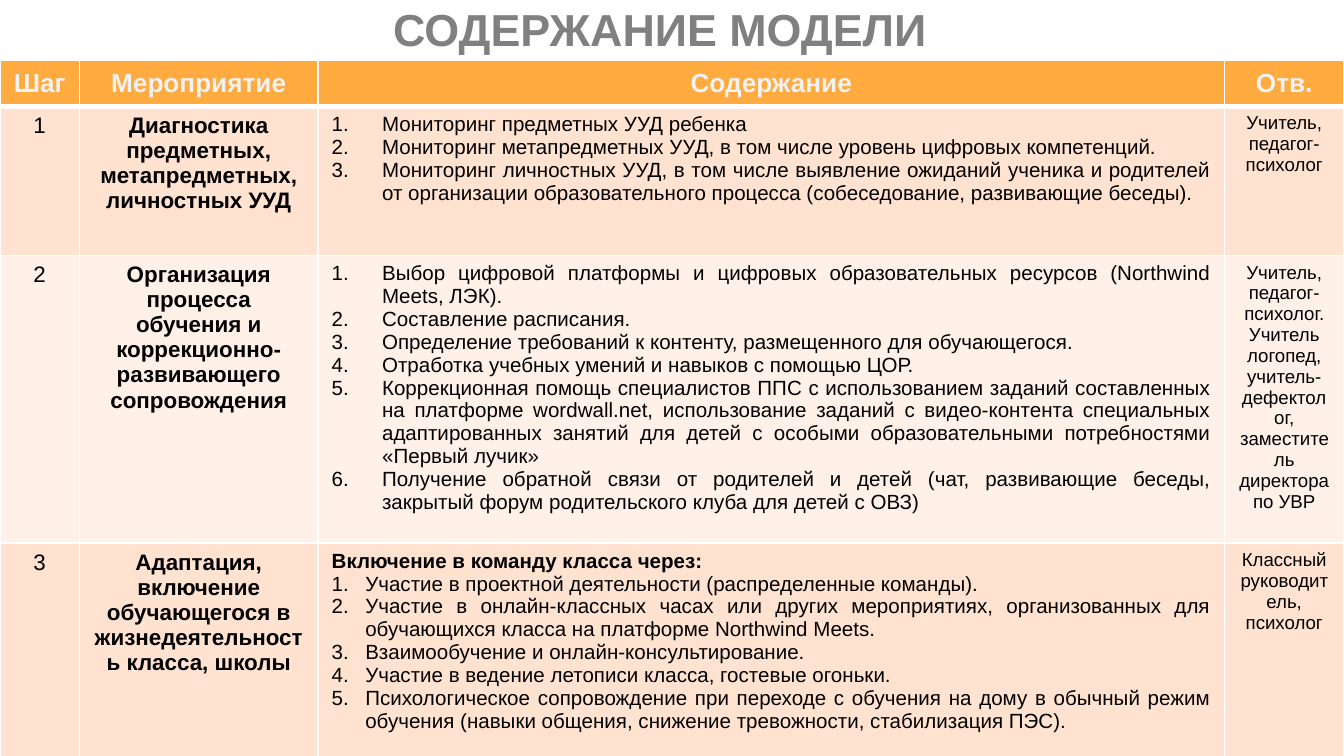
from lxml import etree
from pptx import Presentation
from pptx.dml.color import RGBColor
from pptx.enum.text import MSO_ANCHOR, MSO_AUTO_SIZE, PP_ALIGN
from pptx.oxml.ns import qn
from pptx.util import Pt

CENTER, JUSTIFY = PP_ALIGN.CENTER, PP_ALIGN.JUSTIFY
TOP, MIDDLE = MSO_ANCHOR.TOP, MSO_ANCHOR.MIDDLE

TITLE = "СОДЕРЖАНИЕ МОДЕЛИ"
HEADER = ["Шаг", "Мероприятие", "Содержание", "Отв."]
STEPS = [
    {
        "event": "Диагностика предметных, метапредметных, личностных УУД",
        "lead": None,
        "indent": 27,
        "items": [
            "Мониторинг предметных УУД ребенка",
            "Мониторинг метапредметных УУД, в том числе уровень цифровых компетенций.",
            "Мониторинг личностных УУД, в том числе выявление ожиданий ученика и родителей "
            "от организации образовательного процесса (собеседование, развивающие беседы).",
        ],
        "staff": "Учитель, педагог-психолог",
    },
    {
        "event": "Организация процесса обучения и коррекционно-развивающего сопровождения",
        "lead": None,
        "indent": 27,
        "items": [
            "Выбор цифровой платформы и цифровых образовательных ресурсов (Northwind Meets, ЛЭК).",
            "Составление расписания.",
            "Определение требований к контенту, размещенного для обучающегося.",
            "Отработка учебных умений и навыков с помощью ЦОР.",
            "Коррекционная помощь специалистов ППС с использованием заданий составленных на "
            "платформе wordwall.net, использование заданий с видео-контента специальных "
            "адаптированных занятий для детей с особыми образовательными потребностями "
            "«Первый лучик»",
            "Получение обратной связи от родителей и детей (чат, развивающие беседы, "
            "закрытый форум родительского клуба для детей с ОВЗ)",
        ],
        "staff": "Учитель, педагог-психолог. Учитель логопед, учитель-дефектолог, "
                 "заместитель директора по УВР",
    },
    {
        "event": "Адаптация, включение обучающегося в жизнедеятельность класса, школы",
        "lead": "Включение в команду класса через:",
        "indent": 18,
        "items": [
            "Участие в проектной деятельности (распределенные команды).",
            "Участие в онлайн-классных часах или других мероприятиях, организованных для "
            "обучающихся класса на платформе Northwind Meets.",
            "Взаимообучение и онлайн-консультирование.",
            "Участие в ведение летописи класса, гостевые огоньки.",
            "Психологическое сопровождение при переходе с обучения на дому в обычный режим "
            "обучения (навыки общения, снижение тревожности, стабилизация ПЭС).",
        ],
        "staff": "Классный руководитель, психолог",
    },
]

THEME = {
    "font": "Arial",
    "header_fill": "FFAB40",
    "bands": ["FFE2CF", "FFF1E8"],
    "border": "FFFFFF",
    "text": "000000",
    "title": {"size": 24, "bold": True, "color": "808080"},
    "header": {"size": 14, "bold": True, "color": "F2F2F2"},
    "step": {"size": 12, "bold": False, "color": "000000"},
    "event": {"size": 12, "bold": True, "color": "000000"},
    "lead": {"size": 11, "bold": True, "color": "000000"},
    "item": {"size": 11, "bold": False, "color": "000000"},
    "staff": {"size": 10, "bold": False, "color": "000000"},
}
SLIDE_W, SLIDE_H = 720, 405
TITLE_BOX = {"left": 101, "top": -6.5, "width": 505, "height": 33}
TABLE_TOP = 32.4
COL_WIDTHS = [42.5, 128, 485.5, 64]
ROW_HEIGHTS = [24.5, 80, 154, 114.5]


def write(p, text, style, align=CENTER):
    p.alignment = align
    r = p.add_run()
    r.text = text
    look = THEME[style]
    values = {"name": THEME["font"], "size": Pt(look["size"]), "bold": look["bold"]}
    for name, value in values.items():
        setattr(r.font, name, value)
    r.font.color.rgb = RGBColor.from_string(look["color"])


def number(p, indent):
    pPr = p._p.get_or_add_pPr()
    pPr.set("marL", str(Pt(indent)))
    pPr.set("indent", str(-Pt(indent)))
    color = etree.SubElement(pPr, qn("a:buClr"))
    etree.SubElement(color, qn("a:srgbClr"), val=THEME["text"])
    etree.SubElement(pPr, qn("a:buAutoNum"), type="arabicPeriod")


def format_cell(cell, fill, anchor, bottom):
    tcPr = cell._tc.get_or_add_tcPr()
    for side, width in (("L", 1), ("R", 1), ("T", 1), ("B", bottom)):
        ln = etree.SubElement(tcPr, qn("a:ln" + side), w=str(Pt(width)))
        solid = etree.SubElement(ln, qn("a:solidFill"))
        etree.SubElement(solid, qn("a:srgbClr"), val=THEME["border"])
    cell.fill.solid()
    cell.fill.fore_color.rgb = RGBColor.from_string(fill)
    cell.vertical_anchor = anchor


def fill_content(tf, step):
    entries = [(step["lead"], "lead")] if step["lead"] else []
    entries += [(text, "item") for text in step["items"]]
    for i, (text, style) in enumerate(entries):
        p = tf.add_paragraph() if i else tf.paragraphs[0]
        if style == "item":
            number(p, step["indent"])
        write(p, text, style, JUSTIFY)


def add_title(s):
    sp = s.shapes.title
    for name, value in TITLE_BOX.items():
        setattr(sp, name, Pt(value))
    tf = sp.text_frame
    frame = {"word_wrap": True, "auto_size": MSO_AUTO_SIZE.NONE, "vertical_anchor": TOP}
    frame.update({"margin_" + side: Pt(7.2) for side in ("left", "right", "top", "bottom")})
    for name, value in frame.items():
        setattr(tf, name, value)
    write(tf.paragraphs[0], TITLE, "title")


def add_steps(s):
    table = s.shapes.add_table(
        len(ROW_HEIGHTS), len(COL_WIDTHS), Pt(0), Pt(TABLE_TOP),
        Pt(sum(COL_WIDTHS)), Pt(sum(ROW_HEIGHTS))).table
    for column, width in zip(table.columns, COL_WIDTHS):
        column.width = Pt(width)
    for row, height in zip(table.rows, ROW_HEIGHTS):
        row.height = Pt(height)
    for cell, text in zip(table.rows[0].cells, HEADER):
        format_cell(cell, THEME["header_fill"], MIDDLE, 3)
        write(cell.text_frame.paragraphs[0], text, "header")
    for i, step in enumerate(STEPS):
        cells = list(table.rows[i + 1].cells)
        for cell in cells:
            format_cell(cell, THEME["bands"][i % 2], TOP, 1)
        labels = ((0, str(i + 1), "step"), (1, step["event"], "event"), (3, step["staff"], "staff"))
        for col, text, style in labels:
            write(cells[col].text_frame.paragraphs[0], text, style)
        fill_content(cells[2].text_frame, step)


def main():
    prs = Presentation()
    prs.slide_width, prs.slide_height = Pt(SLIDE_W), Pt(SLIDE_H)
    s = prs.slides.add_slide(prs.slide_layouts[5])
    add_title(s)
    add_steps(s)
    prs.save("out.pptx")


if __name__ == "__main__":
    main()
